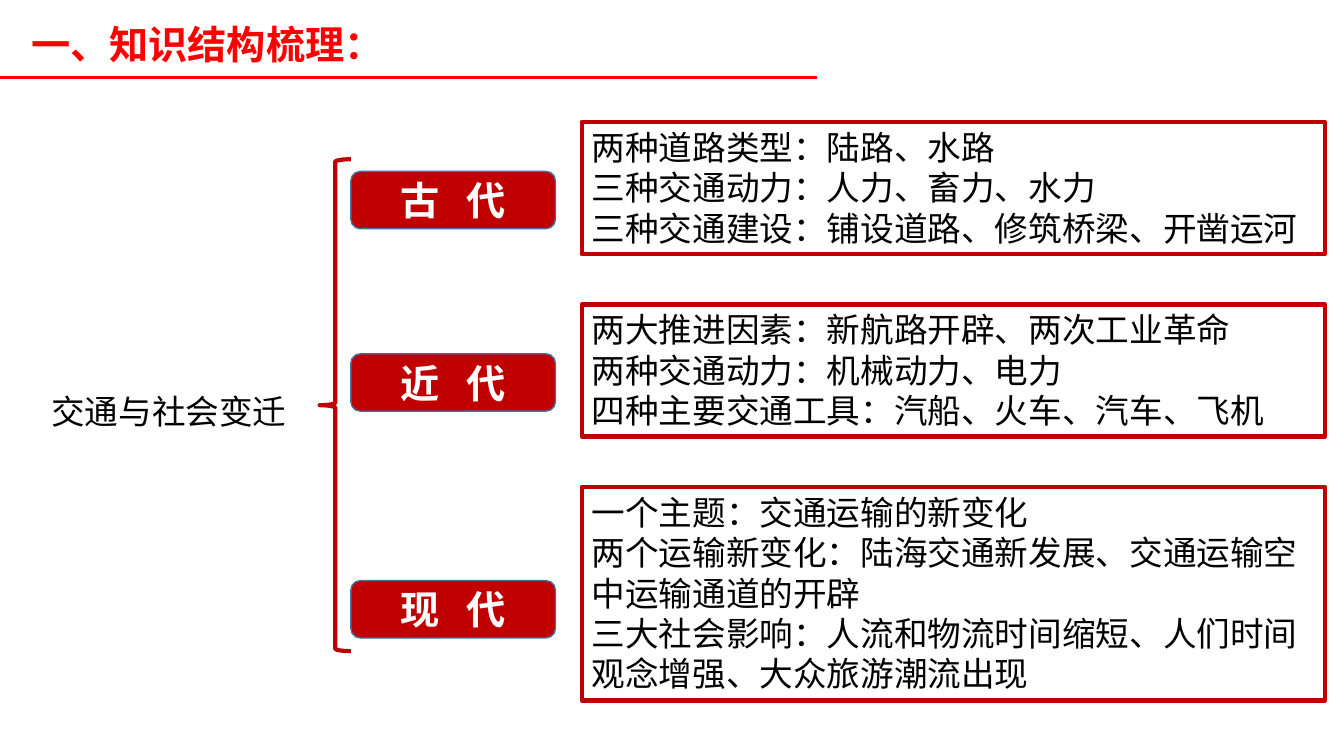
"""Build the slide that outlines transport and social change by era."""
from dataclasses import dataclass

import pptx
import pptx.dml.color
import pptx.enum.shapes
import pptx.enum.text
import pptx.oxml
import pptx.oxml.ns
import pptx.util

SCALE = 9144
RED = pptx.dml.color.RGBColor(0xFF, 0x00, 0x00)
DARK = pptx.dml.color.RGBColor(0xC0, 0x00, 0x00)
BLUE = pptx.dml.color.RGBColor(0x43, 0x73, 0x9E)
BLACK = pptx.dml.color.RGBColor(0x00, 0x00, 0x00)
WHITE = pptx.dml.color.RGBColor(0xFF, 0xFF, 0xFF)
SHAPE = pptx.enum.shapes.MSO_SHAPE
ANCHOR = pptx.enum.text.MSO_ANCHOR
ALIGN = pptx.enum.text.PP_ALIGN
SANS = "Noto Sans CJK SC"


@dataclass
class Era:
    name: str
    tag_top: int
    top: int
    height: int
    facts: list[str]


ERAS = [
    Era("古 代", 170, 121, 131, [
        "两种道路类型：陆路、水路",
        "三种交通动力：人力、畜力、水力",
        "三种交通建设：铺设道路、修筑桥梁、开凿运河",
    ]),
    Era("近 代", 351, 302, 131, [
        "两大推进因素：新航路开辟、两次工业革命",
        "两种交通动力：机械动力、电力",
        "四种主要交通工具：汽船、火车、汽车、飞机",
    ]),
    Era("现 代", 576, 483, 212, [
        "一个主题：交通运输的新变化",
        "两个运输新变化：陆海交通新发展、交通运输空中运输通道的开辟",
        "三大社会影响：人流和物流时间缩短、人们时间观念增强、大众旅游潮流出现",
    ]),
]


def px(num: int) -> pptx.util.Emu:
    """Turn px into EMU."""
    return pptx.util.Emu(num * SCALE)


def write(shape, lines: list[str], size=24, color=BLACK, bold=False, face="Calibri",
          east=SANS, align=ALIGN.LEFT, anchor=ANCHOR.TOP, wrap=True, gap=0) -> None:
    """Fill a shape with lines of text; gap widens the letters before the last."""
    frame = shape.text_frame
    frame.word_wrap = wrap
    frame.auto_size = pptx.enum.text.MSO_AUTO_SIZE.NONE
    frame.vertical_anchor = anchor
    for num, line in enumerate(lines):
        para = frame.paragraphs[0] if num == 0 else frame.add_paragraph()
        para.alignment = align
        for part in ([line[:-1], line[-1]] if gap else [line]):
            run = para.add_run()
            run.text = part
            font = run.font
            font.size = pptx.util.Pt(size)
            font.bold = bold
            font.name = face
            font.color.rgb = color
            props = run._r.get_or_add_rPr()
            props.set("lang", "zh-CN")
            glyph = pptx.oxml.parse_xml(f'<a:ea {pptx.oxml.ns.nsdecls("a")} typeface="{east}"/>')
            props.find(pptx.oxml.ns.qn("a:latin")).addnext(glyph)
            if gap and part != line[-1]:
                props.set("spc", str(gap))


def draw(slide, kind, left: int, top: int, width: int, height: int,
         fill=None, edge=DARK, weight=3):
    """Add a preset shape with a plain fill and edge."""
    shape = slide.shapes.add_shape(kind, px(left), px(top), px(width), px(height))
    shape.shadow.inherit = False
    if fill is None:
        shape.fill.background()
    else:
        shape.fill.solid()
        shape.fill.fore_color.rgb = fill
    shape.line.color.rgb = edge
    shape.line.width = pptx.util.Pt(weight)
    return shape


def head(slide) -> None:
    """Set the title and the rule below it."""
    title = slide.shapes.title
    title.left, title.top, title.width, title.height = map(px, (21, 15, 375, 57))
    write(title, ["一、知识结构梳理："], size=28, color=RED, bold=True,
          face="Noto Sans CJK JP", east="Noto Sans CJK JP", wrap=False)
    rule = slide.shapes.add_connector(
        pptx.enum.shapes.MSO_CONNECTOR.STRAIGHT, px(0), px(77), px(810), px(77))
    rule.line.color.rgb = RED
    rule.line.width = pptx.util.Pt(2.25)
    rule._element.spPr.append(
        pptx.oxml.parse_xml(f'<a:effectLst {pptx.oxml.ns.nsdecls("a")}/>'))


def show(slide, era: Era) -> None:
    """Draw the tag and the facts of one era."""
    tag = draw(slide, SHAPE.ROUNDED_RECTANGLE, 348, era.tag_top, 203, 57,
               fill=DARK, edge=BLUE, weight=1)
    write(tag, [era.name], size=28, color=WHITE, bold=True,
          align=ALIGN.CENTER, anchor=ANCHOR.MIDDLE, gap=630)
    box = draw(slide, SHAPE.RECTANGLE, 577, era.top, 737, era.height)
    write(box, era.facts, face=SANS)


def main() -> None:
    """Build and save the deck."""
    deck = pptx.Presentation()
    deck.slide_width, deck.slide_height = px(1333), px(750)
    slide = deck.slides.add_slide(deck.slide_layouts[5])
    head(slide)
    topic = slide.shapes.add_textbox(px(41), px(383), px(256), px(50))
    write(topic, ["交通与社会变迁"], wrap=False)
    draw(slide, SHAPE.LEFT_BRACE, 317, 158, 31, 488)
    for era in ERAS:
        show(slide, era)
    deck.save("out.pptx")


if __name__ == "__main__":
    main()
